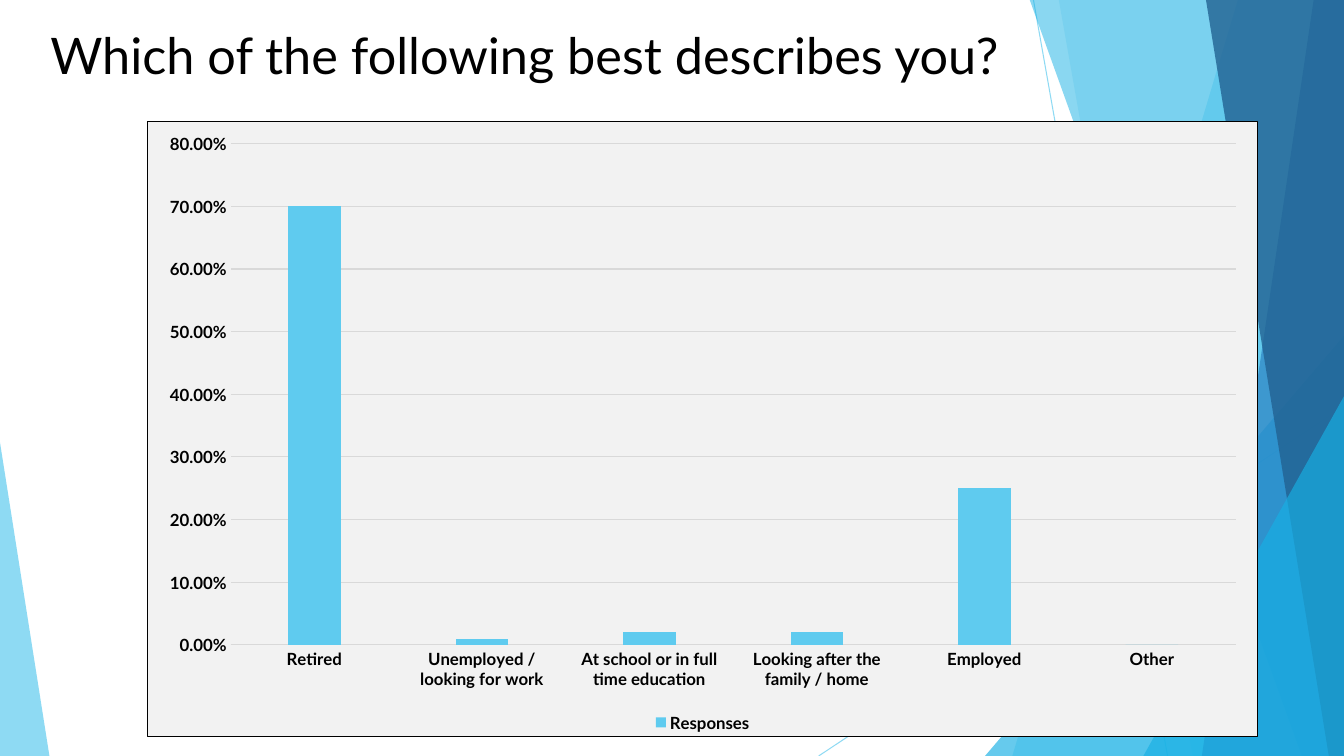
"""Build a survey slide with a column chart over a faceted blue backdrop."""
import lxml.etree
import pptx
import pptx.chart.data
import pptx.dml.color
import pptx.enum.chart
import pptx.enum.shapes
import pptx.enum.text
import pptx.oxml
import pptx.oxml.ns
import pptx.util

EMU_PER_PX = 9144
WIDTH, HEIGHT = 1333, 750
FONT = "Lato"
SKY, CYAN, BLUE, NAVY = "5FCBEF", "17B0E4", "2E83C3", "226292"
BLACK, GRID, PANEL = "000000", "D9D9D9", "F2F2F2"

RAYS = [
    ((1025, 0), (1158, HEIGHT)),
    ((WIDTH, 403), (812, HEIGHT)),
]
TRIANGLE = "triangle"
FACETS = [
    (1228, 1004, SKY, 36),
    (1050, 1183, SKY, 20),
    (TRIANGLE, (977, 333, 356, 417), 1, CYAN, 66),
    (1021, 1291, CYAN, 50),
    (1303, 1192, BLUE, 70),
    (1196, 1318, NAVY, 80),
    (TRIANGLE, (1134, 393, 199, 357), 1, CYAN, 66),
    (TRIANGLE, (0, 439, 49, 311), 0, SKY, 70),
]
RESPONSES = {
    "Retired": 0.7,
    "Unemployed / looking for work": 0.01,
    "At school or in full time education": 0.02,
    "Looking after the family / home": 0.02,
    "Employed": 0.25,
    "Other": 0,
}


def px(*lengths):
    """Turn pixel lengths into a list of EMU lengths."""
    return [pptx.util.Emu(length * EMU_PER_PX) for length in lengths]


def colour(code):
    """Turn a hex string into a colour."""
    return pptx.dml.color.RGBColor.from_string(code)


def apply(target, values):
    """Set each named attribute on the target."""
    for name, value in values.items():
        setattr(target, name, value)


def style_font(font, size, bold=False):
    """Set the shared typeface and colour with the given size."""
    apply(font, {"name": FONT, "size": pptx.util.Pt(size), "bold": bold})
    font.color.rgb = colour(BLACK)


def style_line(line, code):
    """Draw a thin solid line in one colour."""
    line.color.rgb = colour(code)
    line.width = pptx.util.Pt(0.75)


def set_opacity(element, percent):
    """Add an opacity to the colour inside a shape's properties."""
    tint = next(element.iter(pptx.oxml.ns.qn("a:srgbClr")))
    alpha = lxml.etree.SubElement(tint, pptx.oxml.ns.qn("a:alpha"))
    alpha.set("val", str(percent * 1000))


def add_ray(page, start, end):
    """Add one thin translucent line."""
    ray = page.shapes.add_connector(
        pptx.enum.shapes.MSO_CONNECTOR.STRAIGHT, *px(*start, *end))
    style_line(ray.line, SKY)
    properties = ray._element.spPr
    set_opacity(properties, 70)
    lxml.etree.SubElement(properties, pptx.oxml.ns.qn("a:effectLst"))


def paint(shape, code, opacity):
    """Give a shape a translucent fill without line or shadow."""
    shape.shadow.inherit = False
    shape.fill.solid()
    shape.fill.fore_color.rgb = colour(code)
    shape.line.fill.background()
    set_opacity(shape._element.spPr, opacity)


def add_band(page, top, bottom, code, opacity):
    """Add a band from a slanted left edge to the right slide edge."""
    outline = page.shapes.build_freeform(*px(top, -1))
    corners = [(WIDTH, -1), (WIDTH, HEIGHT), (bottom, HEIGHT)]
    outline.add_line_segments([px(*corner) for corner in corners], close=True)
    paint(outline.convert_to_shape(), code, opacity)


def add_triangle(page, place, apex, code, opacity):
    """Add a triangle whose apex lies at a fraction of its width."""
    shape = page.shapes.add_shape(
        pptx.enum.shapes.MSO_SHAPE.ISOSCELES_TRIANGLE, *px(*place))
    shape.adjustments[0] = apex
    paint(shape, code, opacity)


def add_title(page, text):
    """Add the question as a headline."""
    box = page.shapes.add_textbox(*px(40, 19, 1075, 81))
    apply(box.text_frame, {
        "word_wrap": True,
        "vertical_anchor": pptx.enum.text.MSO_ANCHOR.TOP,
    })
    span = box.text_frame.paragraphs[0].add_run()
    span.text = text
    style_font(span.font, 36)


def add_panel(chart):
    """Give the chart area a pale fill and a thin border."""
    panel = pptx.oxml.parse_xml(
        f'<c:spPr {pptx.oxml.ns.nsdecls("c", "a")}>'
        f'<a:solidFill><a:srgbClr val="{PANEL}"/></a:solidFill>'
        f'<a:ln w="9525"><a:solidFill><a:srgbClr val="{BLACK}"/></a:solidFill></a:ln>'
        '</c:spPr>')
    chart._chartSpace.find(pptx.oxml.ns.qn("c:txPr")).addprevious(panel)


def style_axes(chart):
    """Set fonts, scale, lines and grid of both axes."""
    for axis in (chart.category_axis, chart.value_axis):
        axis.major_tick_mark = pptx.enum.chart.XL_TICK_MARK.NONE
        style_font(axis.tick_labels.font, 12, True)
    style_line(chart.category_axis.format.line, GRID)
    values = chart.value_axis
    apply(values, {"minimum_scale": 0, "maximum_scale": 0.8, "major_unit": 0.1})
    apply(values.tick_labels, {
        "number_format": "0.00%", "number_format_is_linked": False})
    values.format.line.fill.background()
    style_line(values.major_gridlines.format.line, GRID)


def add_response_chart(page):
    """Add the column chart of responses."""
    data = pptx.chart.data.CategoryChartData(number_format="0.00%")
    data.categories = list(RESPONSES)
    data.add_series("Responses", list(RESPONSES.values()))
    chart = page.shapes.add_chart(
        pptx.enum.chart.XL_CHART_TYPE.COLUMN_CLUSTERED,
        *px(146, 120, 1102, 611), data).chart
    style_font(chart.font, 10)
    add_panel(chart)
    apply(chart, {"has_title": False, "has_legend": True})
    apply(chart.legend, {
        "position": pptx.enum.chart.XL_LEGEND_POSITION.BOTTOM,
        "include_in_layout": False,
    })
    style_font(chart.legend.font, 12, True)
    style_axes(chart)
    plot = chart.plots[0]
    apply(plot, {"gap_width": 219, "overlap": -27, "vary_by_categories": False})
    fill = plot.series[0].format.fill
    fill.solid()
    fill.fore_color.rgb = colour(SKY)


def main():
    """Build the slide and save it."""
    deck = pptx.Presentation()
    deck.slide_width, deck.slide_height = px(WIDTH, HEIGHT)
    page = deck.slides.add_slide(deck.slide_layouts[6])
    for start, end in RAYS:
        add_ray(page, start, end)
    for facet in FACETS:
        if facet[0] == TRIANGLE:
            add_triangle(page, *facet[1:])
        else:
            add_band(page, *facet)
    add_title(page, "Which of the following best describes you?")
    add_response_chart(page)
    deck.save("out.pptx")


if __name__ == "__main__":
    main()
